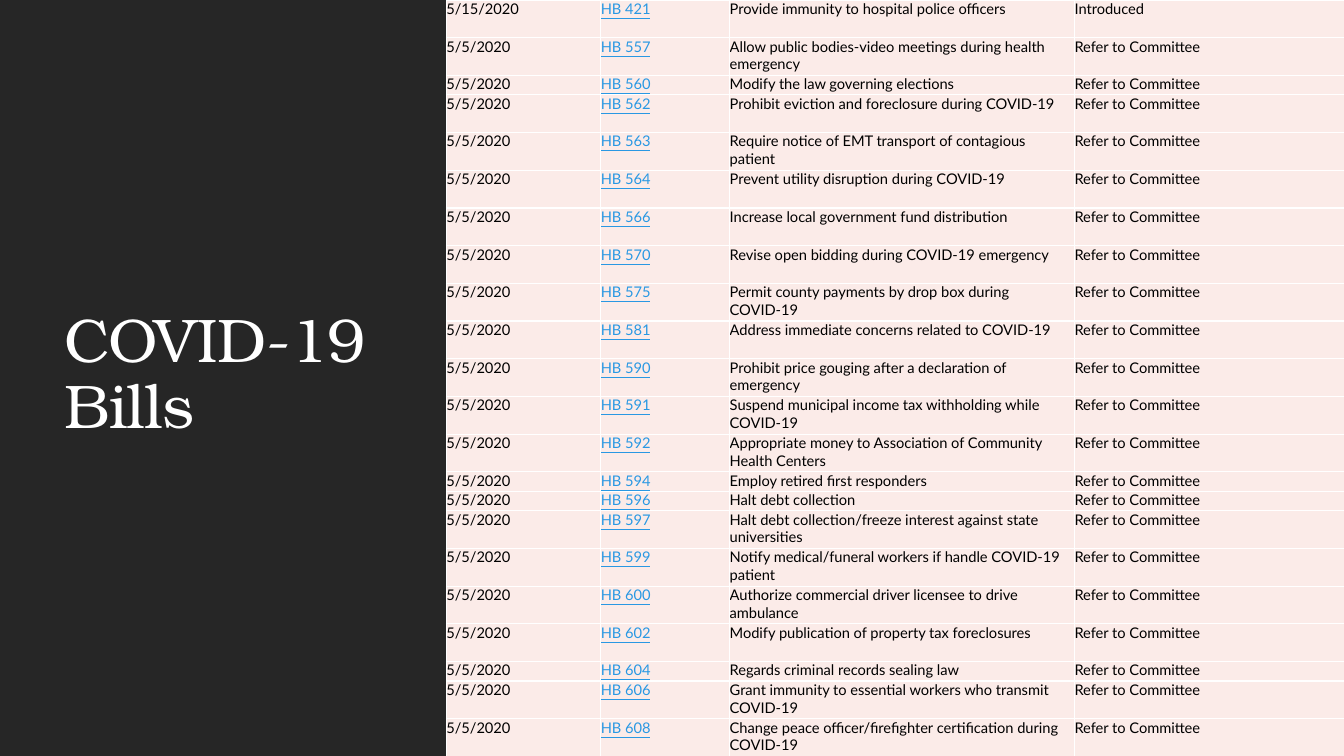
import pptx
import pptx.dml.color
import pptx.enum.shapes
import pptx.enum.text
import pptx.oxml
import pptx.oxml.ns
import pptx.util

Cm = pptx.util.Cm
Pt = pptx.util.Pt

title = ["COVID-19", "Bills"]
first = ("5/15/2020", "421", "Provide immunity to hospital police officers", "Introduced")
later = [
    ("557", "Allow public bodies-video meetings during health emergency"),
    ("560", "Modify the law governing elections"),
    ("562", "Prohibit eviction and foreclosure during COVID-19"),
    ("563", "Require notice of EMT transport of contagious patient"),
    ("564", "Prevent utility disruption during COVID-19"),
    ("566", "Increase local government fund distribution"),
    ("570", "Revise open bidding during COVID-19 emergency"),
    ("575", "Permit county payments by drop box during COVID-19"),
    ("581", "Address immediate concerns related to COVID-19"),
    ("590", "Prohibit price gouging after a declaration of emergency"),
    ("591", "Suspend municipal income tax withholding while COVID-19"),
    ("592", "Appropriate money to Association of Community Health Centers"),
    ("594", "Employ retired first responders"),
    ("596", "Halt debt collection"),
    ("597", "Halt debt collection/freeze interest against state universities"),
    ("599", "Notify medical/funeral workers if handle COVID-19 patient"),
    ("600", "Authorize commercial driver licensee to drive ambulance"),
    ("602", "Modify publication of property tax foreclosures"),
    ("604", "Regards criminal records sealing law"),
    ("606", "Grant immunity to essential workers who transmit COVID-19"),
    ("608", "Change peace officer/firefighter certification during COVID-19"),
]
bills = [first] + [("5/5/2020", num, topic, "Refer to Committee") for num, topic in later]
short = {"560", "594", "596", "604"}
widths = [3.89, 3.25, 8.69, 6.8]
tall_row, short_row = 0.95, 0.49
wide, high, side = 33.87, 19.05, 11.25

theme = {
    "panel": "262626",
    "cell": "FBEBE8",
    "rule": "FFFFFF",
    "rule_size": 1,
    "title": {"name": "TeX Gyre Bonum", "size": Pt(44), "color": "FFFFFF"},
    "body": {"name": "Lato", "size": Pt(10.5), "color": "000000", "bold": False},
    "link": {"name": "Lato", "size": Pt(10.5), "color": "2998E3", "bold": False,
             "underline": True},
}


def tint(code):
    return pptx.dml.color.RGBColor.from_string(code)


def apply(item, values):
    for key, value in values.items():
        if key == "color":
            item.fill.solid()
            item.fill.fore_color.rgb = tint(value)
        else:
            setattr(item, key, value)


def edge(cell):
    props = cell._tc.get_or_add_tcPr()
    space = pptx.oxml.ns.nsdecls("a")
    for part in ("lnL", "lnR", "lnT", "lnB"):
        props.append(pptx.oxml.parse_xml(
            f'<a:{part} {space} w="{Pt(theme["rule_size"])}"><a:solidFill>'
            f'<a:srgbClr val="{theme["rule"]}"/></a:solidFill></a:{part}>'))


def add_panel(slide):
    panel = slide.shapes.add_shape(
        pptx.enum.shapes.MSO_SHAPE.RECTANGLE, 0, 0, Cm(side), Cm(high))
    panel.shadow.inherit = False
    apply(panel, {"color": theme["panel"]})
    panel.line.fill.background()


def add_title(slide):
    box = slide.shapes.add_textbox(Cm(1.37), Cm(1.45), Cm(8.56), Cm(16.03))
    frame = box.text_frame
    apply(frame, {"word_wrap": True,
                  "vertical_anchor": pptx.enum.text.MSO_ANCHOR.MIDDLE})
    para = frame.paragraphs[0]
    para.line_spacing = 0.9
    apply(para.font, theme["title"])
    for index, line in enumerate(title):
        if index:
            para.add_line_break()
        run = para.add_run()
        run.text = line
        apply(run.font, theme["title"])
        run.font._element.set("spc", "-50")


def add_bills(slide):
    frame = slide.shapes.add_table(
        len(bills), len(widths), Cm(side), 0, Cm(sum(widths)), Cm(high))
    table = frame.table
    apply(table, {"first_row": False, "horz_banding": False})
    for column, width in zip(table.columns, widths):
        column.width = Cm(width)
    for row, (date, num, topic, status) in zip(table.rows, bills):
        row.height = Cm(short_row if num in short else tall_row)
        texts = (date, f"HB {num}", topic, status)
        for index, (cell, text) in enumerate(zip(row.cells, texts)):
            apply(cell, {"margin_left": 0, "margin_right": 0,
                         "margin_top": 0, "margin_bottom": 0})
            edge(cell)
            apply(cell, {"color": theme["cell"]})
            run = cell.text_frame.paragraphs[0].add_run()
            run.text = text
            apply(run.font, theme["link" if index == 1 else "body"])


def main():
    deck = pptx.Presentation()
    apply(deck, {"slide_width": Cm(wide), "slide_height": Cm(high)})
    slide = deck.slides.add_slide(deck.slide_layouts[6])
    add_panel(slide)
    add_title(slide)
    add_bills(slide)
    deck.save("out.pptx")


if __name__ == "__main__":
    main()
